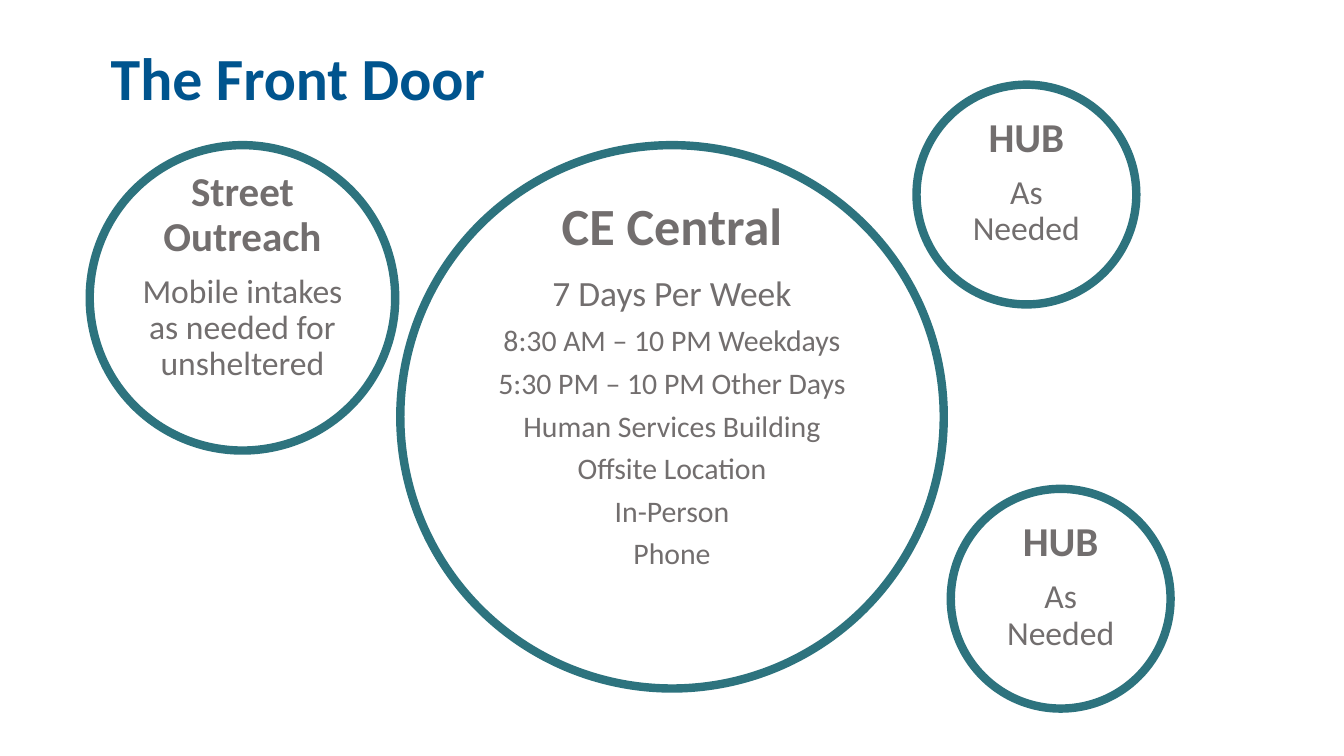
from pptx import Presentation
from pptx.dml.color import RGBColor
from pptx.enum.shapes import MSO_SHAPE
from pptx.enum.text import MSO_ANCHOR, PP_ALIGN
from pptx.util import Inches, Pt

NAVY = RGBColor(0x00, 0x54, 0x8E)
TEAL = RGBColor(0x2D, 0x73, 0x7E)
GRAY = RGBColor(0x72, 0x6E, 0x6E)
SPACE_AFTER = 0.35  # share of the font size


def add_text(p, text, *, size, color=GRAY, bold=False, align=PP_ALIGN.CENTER, after=0):
    p.alignment = align
    p.line_spacing = 0.9
    p.space_after = Pt(after)
    r = p.add_run()
    r.text = text
    r.font.name = "Calibri"
    r.font.size = Pt(size)
    r.font.bold = bold
    r.font.color.rgb = color


class FrontDoorSlide:
    font_inset = Inches(0.05)
    ring_width = Pt(6)

    def __init__(self, prs):
        self.s = prs.slides.add_slide(prs.slide_layouts[6])

    def text_frame(self, left, top, width, height):
        sp = self.s.shapes.add_textbox(
            Inches(left), Inches(top), Inches(width), Inches(height))
        tf = sp.text_frame
        tf.word_wrap = True
        tf.vertical_anchor = MSO_ANCHOR.MIDDLE
        return sp, tf

    def title(self, text):
        _, tf = self.text_frame(1, 0, 11.33, 1.61)
        add_text(tf.paragraphs[0], text, size=42.7, color=NAVY, bold=True,
                 align=PP_ALIGN.LEFT)

    def circle(self, left, top, diameter, text_size, text_middle, lines):
        """Ring with centred lines; the first line is the bold heading."""
        ring = self.s.shapes.add_shape(
            MSO_SHAPE.OVAL, Inches(left), Inches(top), Inches(diameter), Inches(diameter))
        ring.shadow.inherit = False
        ring.fill.background()
        ring.line.color.rgb = TEAL
        ring.line.width = self.ring_width

        width, height = text_size
        sp, tf = self.text_frame(left + (diameter - width) / 2,
                                 text_middle - height / 2, width, height)
        tf.margin_left = tf.margin_right = self.font_inset
        tf.margin_top = tf.margin_bottom = self.font_inset
        for i, (text, size) in enumerate(lines):
            p = tf.add_paragraph() if i else tf.paragraphs[0]
            add_text(p, text, size=size, bold=i == 0, after=size * SPACE_AFTER)
        self.s.shapes.add_group_shape([ring, sp])


def main():
    prs = Presentation()
    prs.slide_width, prs.slide_height = Inches(13.33), Inches(7.5)
    slide = FrontDoorSlide(prs)

    slide.title("The Front Door")

    # Central access point
    details = ["8:30 AM – 10 PM Weekdays", "5:30 PM – 10 PM Other Days",
               "Human Services Building", "Offsite Location", "In-Person", "Phone"]
    slide.circle(3.97, 1.44, 5.39, (3.81, 4.2), 3.83,
                 [("CE Central", 37.3), ("7 Days Per Week", 25.3)]
                 + [(text, 21.3) for text in details])

    # Street outreach
    slide.circle(0.89, 1.44, 3.03, (2.14, 2.5), 2.75,
                 [("Street Outreach", 29.3),
                  ("Mobile intakes as needed for unsheltered", 24)])

    # Hubs
    for left, top in [(9.09, 0.84), (9.43, 4.85)]:
        slide.circle(left, top, 2.18, (1.54, 1.7), top + 0.97,
                     [("HUB", 29.3), ("As Needed", 24)])

    prs.save("out.pptx")


if __name__ == "__main__":
    main()
